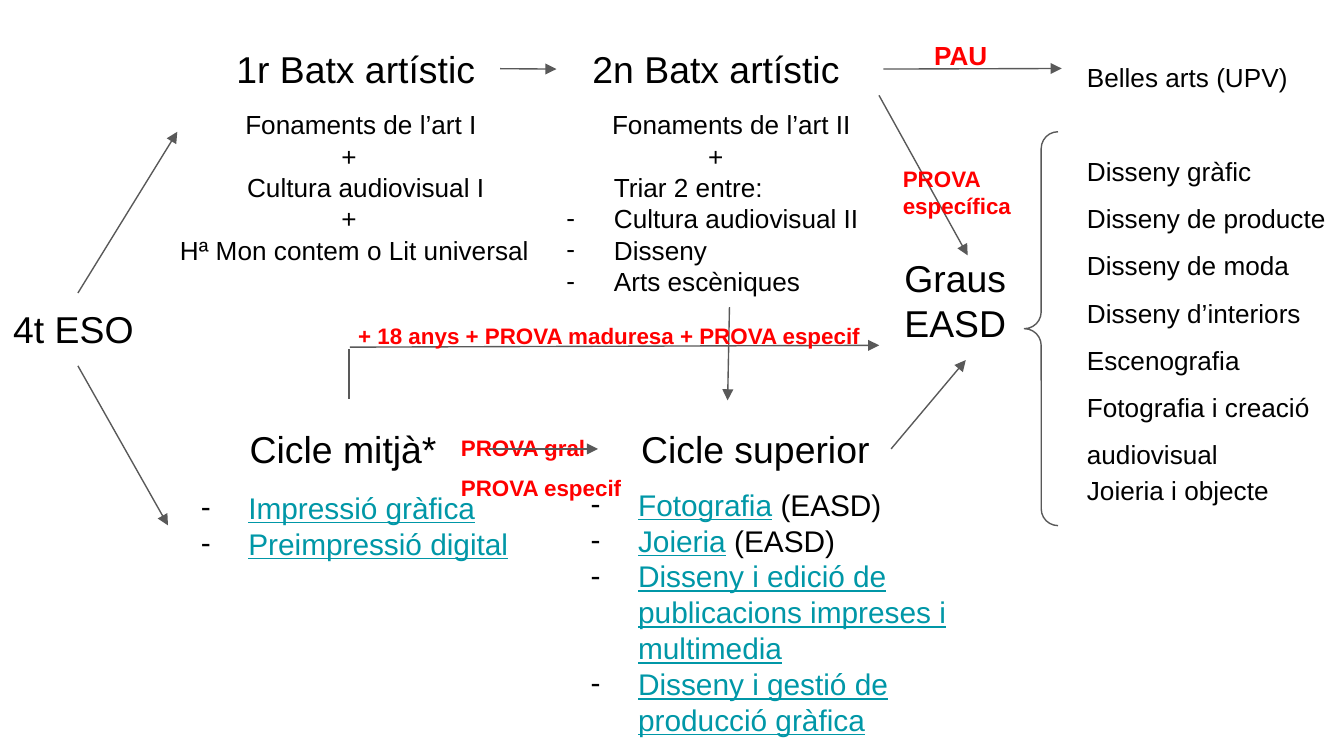
from dataclasses import dataclass
from typing import Optional

from lxml import etree
from pptx import Presentation
from pptx.dml.color import RGBColor
from pptx.enum.shapes import MSO_CONNECTOR, MSO_SHAPE
from pptx.enum.text import MSO_AUTO_SIZE
from pptx.oxml.ns import qn
from pptx.util import Pt

STRAIGHT = MSO_CONNECTOR.STRAIGHT
LEFT_BRACE = MSO_SHAPE.LEFT_BRACE
GROW = MSO_AUTO_SIZE.SHAPE_TO_FIT_TEXT
TOP, BOTTOM, RIGHT = 0, 2, 3

FONT = "Arial"
BLACK, RED, TEAL, GREY = "000000", "FF0000", "0097A7", "595959"
INSET = 7.2
LINE_WIDTH = 0.75


@dataclass
class Line:
    """One paragraph: a linked-looking title, then plain text."""
    text: str = ""
    title: str = ""
    indent: float = 0
    bullet: bool = False
    spacing: Optional[float] = None
    before: float = 0


@dataclass
class Block:
    left: float
    top: float
    width: float
    height: float
    size: float
    lines: list[Line]
    color: str = BLACK
    bold: bool = False


@dataclass
class Arrow:
    start: tuple[float, float]
    end: tuple[float, float]
    head: bool = True
    begin_at: Optional[tuple] = None
    end_at: Optional[tuple] = None


def rgb(value: str) -> RGBColor:
    return RGBColor.from_string(value)


def add_bullet(paragraph) -> None:
    props = paragraph._p.get_or_add_pPr()
    props.set("marL", str(Pt(36)))
    props.set("indent", str(Pt(-25.5)))
    color = etree.SubElement(props, qn("a:buClr"))
    etree.SubElement(color, qn("a:srgbClr"), val=BLACK)
    etree.SubElement(props, qn("a:buFont"), typeface=FONT)
    etree.SubElement(props, qn("a:buChar"), char="-")


def add_run(paragraph, text: str, block: Block, color: str, underline: bool = False) -> None:
    run = paragraph.add_run()
    run.text = text
    font = run.font
    font.name, font.size, font.bold = FONT, Pt(block.size), block.bold
    font.underline = underline
    font.color.rgb = rgb(color)


def add_block(slide, block: Block):
    box = slide.shapes.add_textbox(Pt(block.left), Pt(block.top), Pt(block.width), Pt(block.height))
    frame = box.text_frame
    frame.word_wrap = True
    frame.auto_size = GROW
    frame.margin_left = frame.margin_right = Pt(INSET)
    frame.margin_top = frame.margin_bottom = Pt(INSET)
    for number, line in enumerate(block.lines):
        paragraph = frame.add_paragraph() if number else frame.paragraphs[0]
        if line.spacing:
            paragraph.line_spacing = line.spacing
        if line.before:
            paragraph.space_before = Pt(line.before)
        if line.bullet:
            add_bullet(paragraph)
        elif line.indent:
            paragraph._p.get_or_add_pPr().set("indent", str(Pt(line.indent)))
        if line.title:
            add_run(paragraph, line.title, block, TEAL, underline=True)
        if line.text:
            add_run(paragraph, line.text, block, block.color)
    return box


def add_arrow(slide, arrow: Arrow) -> None:
    connector = slide.shapes.add_connector(STRAIGHT, *map(Pt, arrow.start + arrow.end))
    if arrow.begin_at:
        connector.begin_connect(*arrow.begin_at)
    if arrow.end_at:
        connector.end_connect(*arrow.end_at)
    connector.line.color.rgb = rgb(GREY)
    connector.line.width = Pt(LINE_WIDTH)
    if arrow.head:
        etree.SubElement(connector.line._get_or_add_ln(), qn("a:tailEnd"), type="triangle")
    etree.SubElement(connector._element.spPr, qn("a:effectLst"))


def stage(left: float, top: float, width: float, text: str, height: float = 39) -> Block:
    return Block(left, top, width, height, 20, [Line(text)])


def label(left: float, top: float, width: float, height: float, *texts: str,
          size: float = 12, spacing: Optional[float] = None) -> Block:
    lines = [Line(text, spacing=spacing) for text in texts]
    return Block(left, top, width, height, size, lines, RED, True)


def main() -> None:
    deck = Presentation()
    deck.slide_width, deck.slide_height = Pt(720), Pt(405)
    slide = deck.slides.add_slide(deck.slide_layouts[6])

    # Stages of the study path
    eso = add_block(slide, stage(0, 157, 83.5, "4t ESO"))
    add_block(slide, stage(119.5, 17.5, 160.5, "1r Batx artístic"))
    add_block(slide, stage(310.3, 17.5, 160.5, "2n Batx artístic"))
    add_block(slide, stage(126.7, 221, 141, "Cicle mitjà*"))
    superior = add_block(slide, stage(336.4, 221, 141, "Cicle superior"))
    graus = add_block(slide, stage(477.4, 129.5, 80, "Graus EASD", 63.4))

    # Subjects of each Batx year
    plus = Line("+", indent=86.5)
    first_year = [Line("Fonaments de l’art I", indent=35), plus,
                  Line("Cultura audiovisual I", indent=36), plus,
                  Line("Hª Mon contem o Lit universal")]
    second_year = [Line("Fonaments de l’art II", indent=35), plus,
                   Line("Triar 2 entre:", indent=36)]
    second_year += [Line(subject, bullet=True) for subject in
                    ("Cultura audiovisual II", "Disseny", "Arts escèniques")]
    add_block(slide, Block(89.3, 51, 209.5, 99.5, 14, first_year))
    add_block(slide, Block(285.8, 51, 209.5, 116.5, 14, second_year))

    # Courses of each cicle
    middle_courses = [Line(title=course, bullet=True) for course in
                      ("Impressió gràfica", "Preimpressió digital")]
    upper_courses = [Line(text, course, bullet=True) for course, text in (
        ("Fotografia", " (EASD)"),
        ("Joieria", " (EASD)"),
        ("Disseny i edició de publicacions impreses i multimedia", ""),
        ("Disseny i gestió de producció gràfica", ""))]
    add_block(slide, Block(90, 255, 196.5, 53, 16, middle_courses))
    add_block(slide, Block(298.8, 253.4, 239.8, 150.5, 16, upper_courses))

    # Degrees
    degrees = [Line("Belles arts (UPV)", spacing=1.5),
               Line("Disseny gràfic", spacing=1.5, before=25.2)]
    degrees += [Line(degree, spacing=1.5) for degree in (
        "Disseny de producte", "Disseny de moda", "Disseny d’interiors",
        "Escenografia", "Fotografia i creació audiovisual")]
    degrees.append(Line("Joieria i objecte", spacing=1.15))
    add_block(slide, Block(575.2, 17.5, 144.8, 260.5, 14, degrees))

    brace = slide.shapes.add_shape(LEFT_BRACE, Pt(548.8), Pt(70.6), Pt(18), Pt(211))
    brace.adjustments[0] = brace.adjustments[1] = 0.5
    brace.shadow.inherit = False
    brace.fill.background()
    brace.line.color.rgb = rgb(GREY)
    brace.line.width = Pt(LINE_WIDTH)

    # Exam label that lies under its arrow
    add_block(slide, label(239.8, 218.2, 102.2, 51, "PROVA gral", "PROVA especif", spacing=1.5))

    # Routes between stages
    for arrow in (
        Arrow((41.8, 157), (95, 70.6), begin_at=(eso, TOP)),
        Arrow((41.8, 196), (90, 281.5), begin_at=(eso, BOTTOM)),
        Arrow((267.9, 36.8), (298.1, 37)),
        Arrow((262, 240.5), (320.4, 240.5)),
        Arrow((470.9, 51.1), (518.4, 136.8)),
        Arrow((477.4, 240.5), (517.4, 192.9), begin_at=(superior, RIGHT), end_at=(graus, BOTTOM)),
        Arrow((390.8, 164.5), (389.8, 214.5)),
        Arrow((187.5, 186), (471, 185)),
        Arrow((187, 187), (187, 214), head=False),
        Arrow((473.3, 37), (568.8, 36.7)),
    ):
        add_arrow(slide, arrow)

    # Exam labels over the arrows
    add_block(slide, label(476.6, 81.4, 83.5, 44, "PROVA específica"))
    add_block(slide, label(184.8, 165.6, 289.4, 29, "+ 18 anys + PROVA maduresa + PROVA especif"))
    add_block(slide, label(493.3, 13.7, 47.5, 31.7, "PAU", size=14))

    deck.save("out.pptx")


if __name__ == "__main__":
    main()
